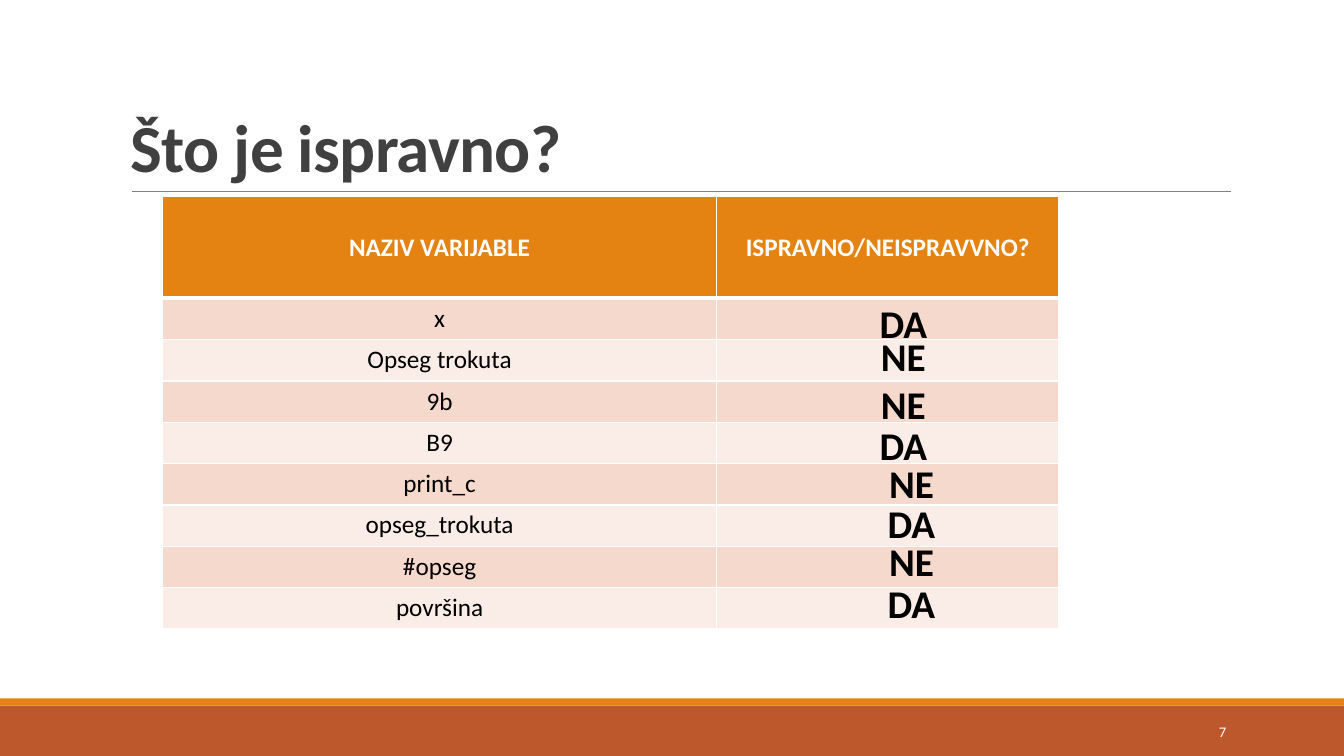
from dataclasses import dataclass

from lxml.etree import SubElement
from pptx import Presentation
from pptx.dml.color import RGBColor
from pptx.enum.shapes import MSO_CONNECTOR, MSO_SHAPE
from pptx.enum.text import MSO_ANCHOR, PP_ALIGN
from pptx.oxml import parse_xml
from pptx.oxml.ns import nsdecls, qn
from pptx.util import Inches, Pt


@dataclass(frozen=True)
class Theme:
    font: str = "Calibri"
    white: str = "FFFFFF"
    black: str = "000000"
    title: str = "404040"
    rule: str = "808080"
    orange: str = "E48312"
    rust: str = "BD582C"
    bands: tuple = ("F5D9CC", "FAEDE7")
    title_size: float = 48
    answer_size: float = 28
    table_size: float = 18
    number_size: float = 10.5


THEME = Theme()
HEADERS = ("NAZIV VARIJABLE", "ISPRAVNO/NEISPRAVVNO?")
VARIABLES = ("x", "Opseg trokuta", "9b", "B9", "print_c",
             "opseg_trokuta", "#opseg", "površina")
ANSWERS = (
    ("DA", 8.4, 2.92), ("NE", 8.4, 3.25), ("NE", 8.4, 3.72), ("DA", 8.4, 4.13),
    ("NE", 8.48, 4.51), ("DA", 8.48, 4.9), ("NE", 8.48, 5.28), ("DA", 8.48, 5.7),
)


def rgb(color):
    return RGBColor.from_string(color)


def add_run(p, text, size, color, bold=False, align=PP_ALIGN.CENTER):
    p.alignment = align
    r = p.add_run()
    r.text = text
    r.font.name = THEME.font
    r.font.size = Pt(size)
    r.font.bold = bold
    r.font.color.rgb = rgb(color)
    return r


def add_text(s, box, text, size, color, bold=False,
             align=PP_ALIGN.CENTER, anchor=MSO_ANCHOR.TOP):
    sp = s.shapes.add_textbox(*map(Inches, box))
    tf = sp.text_frame
    tf.word_wrap = True
    tf.vertical_anchor = anchor
    p = tf.paragraphs[0]
    return p, add_run(p, text, size, color, bold, align)


def add_band(s, top, height, color):
    sp = s.shapes.add_shape(MSO_SHAPE.RECTANGLE, 0, Inches(top),
                            Inches(13.33), Inches(height))
    sp.shadow.inherit = False
    sp.fill.solid()
    sp.fill.fore_color.rgb = rgb(color)
    sp.line.fill.background()


def add_rule(s, left, right, y):
    line = s.shapes.add_connector(MSO_CONNECTOR.STRAIGHT, Inches(left), Inches(y),
                                  Inches(right), Inches(y))
    line.line.color.rgb = rgb(THEME.rule)
    line.line.width = Pt(0.5)
    SubElement(line._element.spPr, qn("a:effectLst"))


def outline(tag, width):
    return parse_xml(
        f'<a:{tag} {nsdecls("a")} w="{Pt(width)}"><a:solidFill>'
        f'<a:srgbClr val="{THEME.white}"/></a:solidFill></a:{tag}>')


def style_cell(cell, fill, top=1, bottom=1):
    tc_pr = cell._tc.get_or_add_tcPr()
    for tag, width in (("lnL", 1), ("lnR", 1), ("lnT", top), ("lnB", bottom)):
        tc_pr.append(outline(tag, width))
    cell.fill.solid()
    cell.fill.fore_color.rgb = rgb(fill)


def add_variable_table(s):
    header_height, row_height = 1.01, 0.41
    widths = (5.5, 3.39)
    table = s.shapes.add_table(
        len(VARIABLES) + 1, len(widths), Inches(1.61), Inches(1.95),
        Inches(sum(widths)), Inches(header_height + row_height * len(VARIABLES))).table
    table.horz_banding = False
    for column, width in zip(table.columns, widths):
        column.width = Inches(width)
    for i, row in enumerate(table.rows):
        row.height = Inches(row_height if i else header_height)
    for i, text in enumerate(HEADERS):
        cell = table.cell(0, i)
        style_cell(cell, THEME.orange, bottom=3)
        cell.vertical_anchor = MSO_ANCHOR.MIDDLE
        add_run(cell.text_frame.paragraphs[0], text, THEME.table_size, THEME.white, True)
    for i, name in enumerate(VARIABLES, 1):
        for cell in table.rows[i].cells:
            style_cell(cell, THEME.bands[(i - 1) % 2], top=3 if i == 1 else 1)
        add_run(table.cell(i, 0).text_frame.paragraphs[0], name,
                THEME.table_size, THEME.black)


def add_answer(s, text, left, top):
    _, r = add_text(s, (left, top, 1.12, 0.57), text, THEME.answer_size,
                    THEME.black, True)
    r.font._element.insert(0, outline("ln", 0.75))


def add_title(s, text):
    p, r = add_text(s, (1.2, 0.31, 11, 1.59), text, THEME.title_size, THEME.title,
                    True, PP_ALIGN.LEFT, MSO_ANCHOR.BOTTOM)
    p.line_spacing = 0.85
    r.font._element.set("spc", "-50")


def main():
    prs = Presentation()
    prs.slide_width, prs.slide_height = Inches(13.33), Inches(7.5)
    s = prs.slides.add_slide(prs.slide_layouts[6])
    add_band(s, 7, 0.5, THEME.rust)
    add_band(s, 6.93, 0.07, THEME.orange)
    add_rule(s, 1.31, 12.21, 1.9)
    add_title(s, "Što je ispravno?")
    add_variable_table(s)
    for answer in ANSWERS:
        add_answer(s, *answer)
    add_text(s, (10.83, 7.06, 1.43, 0.4), "7", THEME.number_size, THEME.white,
             align=PP_ALIGN.RIGHT, anchor=MSO_ANCHOR.MIDDLE)
    prs.save("out.pptx")


if __name__ == "__main__":
    main()
